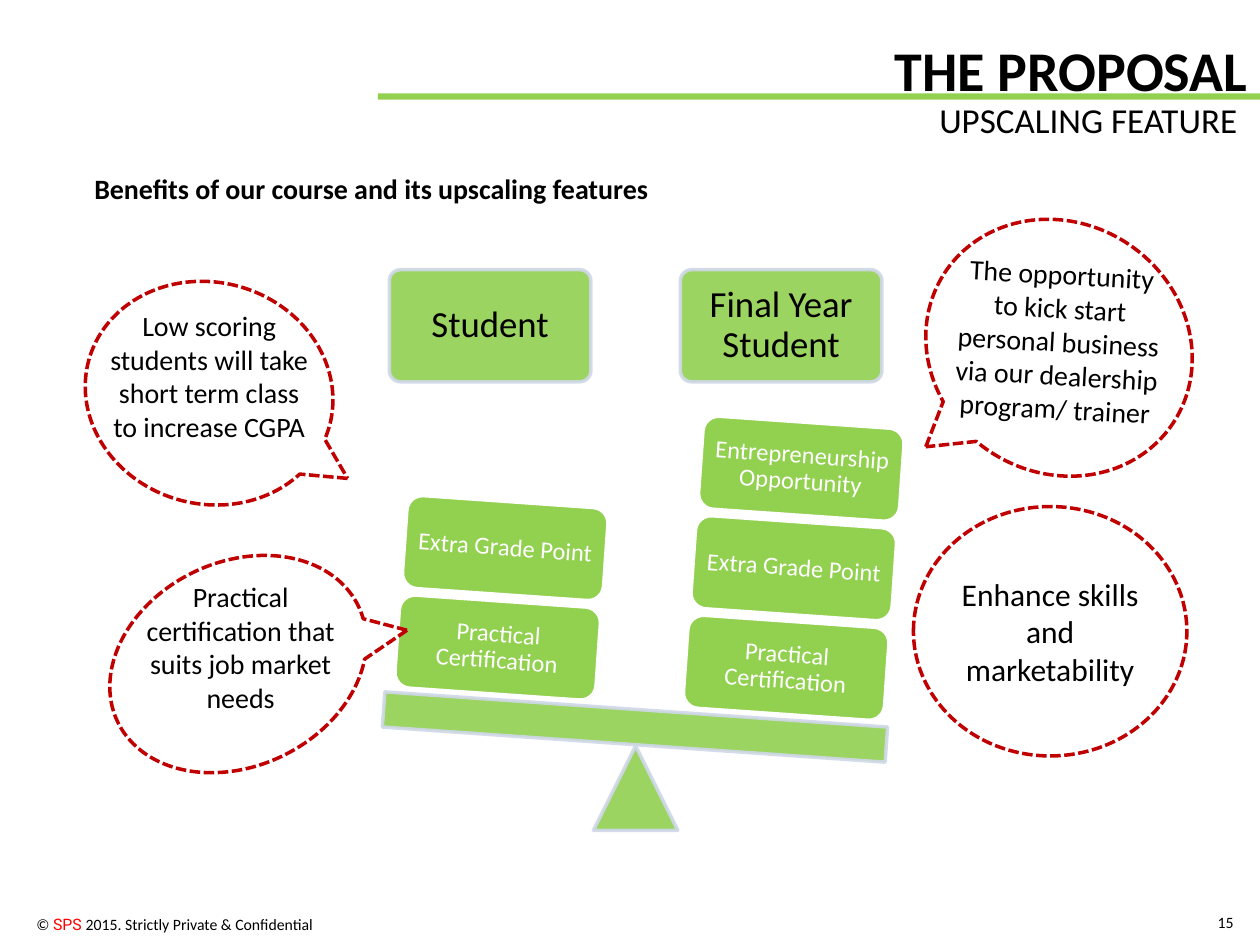
from lxml import etree
from pptx import Presentation
from pptx.dml.color import RGBColor
from pptx.enum import dml, shapes, text
from pptx.oxml.ns import qn
from pptx.util import Inches, Pt

HUE = {"ink": "000000", "green": "92D050", "edge": "D0D8E8", "white": "FFFFFF",
       "red": "C00000", "mark": "FF0000"}
KIND = shapes.MSO_SHAPE
SIDE = {"l": text.PP_ALIGN.LEFT, "c": text.PP_ALIGN.CENTER, "r": text.PP_ALIGN.RIGHT}

HEADS = [("Student", 3.09), ("Final Year Student", 5.4)]
# Each stack: left and top of its lowest card, then labels from the bottom up
STACKS = [
    (5.44, 4.93, ["Practical Certification", "Extra Grade Point",
                  "Entrepreneurship Opportunity"]),
    (3.15, 4.77, ["Practical Certification", "Extra Grade Point"]),
]
STEP = (0.06, -0.79)
TILT = 4
# Balloon box and turn, then its words with their box and turn
CALLS = [
    ((0.78, 2.13, 1.76, 1.98), 285.1,
     "Low scoring students will take short term class to increase CGPA",
     (0.75, 2.4, 1.82, 1.18), 0),
    ((1.08, 4.21, 1.62, 2.12), 244.4,
     "Practical certification that suits job market needs",
     (0.99, 4.55, 1.84, 1.18), 0),
    ((7.32, 1.77, 2.17, 1.98), 33.3,
     "The opportunity to kick start personal business via our dealership "
     "program/ trainer", (7.49, 1.99, 1.82, 1.45), 3.1),
]

deck = Presentation()
deck.slide_width, deck.slide_height = Inches(10), Inches(7.5)
slide = deck.slides.add_slide(deck.slide_layouts[5])


def color(name):
    return RGBColor.from_string(HUE[name])


def fade(fill):
    """Make a solid fill 90 % opaque."""
    for tint in fill.iter(qn("a:srgbClr")):
        etree.SubElement(tint, qn("a:alpha"), val="90000")


def write(shape, runs, size=16, hue="ink", bold=False, side="l", mid=False,
          pad=(0.1, 0.05), gap=None):
    """Fill a shape with one paragraph; runs is a string or (words, font, hue) tuples."""
    frame = shape.text_frame
    frame.word_wrap = True
    frame.auto_size = text.MSO_AUTO_SIZE.NONE
    frame.vertical_anchor = text.MSO_ANCHOR.MIDDLE if mid else text.MSO_ANCHOR.TOP
    frame.margin_left = frame.margin_right = Inches(pad[0])
    frame.margin_top = frame.margin_bottom = Inches(pad[1])
    para = frame.paragraphs[0]
    para.alignment = SIDE[side]
    if gap:
        para.line_spacing = gap
    if isinstance(runs, str):
        runs = [(runs, "Calibri", hue)]
    for words, face, tone in runs:
        run = para.add_run()
        run.text = words
        font = run.font
        font.name, font.size, font.bold = face, Pt(size), bold
        font.color.rgb = color(tone)


def label(box, runs, turn=0, **form):
    shape = slide.shapes.add_textbox(*map(Inches, box))
    shape.rotation = turn
    write(shape, runs, **form)


def draw(kind, box, fill=None, line=None, turn=0, clear=False, dash=False):
    shape = slide.shapes.add_shape(kind, *map(Inches, box))
    shape.shadow.inherit = False
    shape.rotation = turn
    if kind == KIND.ROUNDED_RECTANGLE and clear:
        shape.adjustments[0] = 0.1
    if fill:
        shape.fill.solid()
        shape.fill.fore_color.rgb = color(fill)
    else:
        shape.fill.background()
    if line:
        shape.line.color.rgb = color(line)
        shape.line.width = Pt(2)
    else:
        shape.line.fill.background()
    if dash:
        shape.line.dash_style = dml.MSO_LINE.SQUARE_DOT
        shape.line._ln.find(qn("a:prstDash")).set("val", "sysDash")
    if clear:
        fade(shape._element.spPr)
    return shape


# Frame of the page
draw(KIND.RECTANGLE, (3, 0.74, 7, 0.05), "green")
label((0.17, 7.21, 2.41, 0.25),
      [("© ", "Calibri", "ink"), ("SPS ", "Roboto", "mark"),
       ("2015. Strictly Private & Confidential", "Calibri", "ink")],
      size=9, side="r")
label((9.49, 7.12, 0.4, 0.4), "15", size=9, side="r", mid=True)

title = slide.shapes.title
title.left, title.top, title.width, title.height = map(Inches, (7, 0.23, 3.08, 0.64))
write(title, "THE PROPOSAL", size=32, bold=True)
label((4.92, 0.73, 5, 0.44), "UPSCALING FEATURE", size=20, side="r")
label((0.65, 1.31, 5.25, 0.37), "Benefits of our course and its upscaling features",
      bold=True)

# Balance
for words, left in HEADS:
    head = draw(KIND.ROUNDED_RECTANGLE, (left, 2.14, 1.6, 0.89), "green", "edge",
                clear=True)
    write(head, words, size=21, side="c", mid=True, pad=(0.09, 0.09), gap=0.9)
draw(KIND.ISOSCELES_TRIANGLE, (4.71, 5.92, 0.67, 0.67), "green", "edge", clear=True)
draw(KIND.RECTANGLE, (3.04, 5.63, 4, 0.28), "green", "edge", TILT, clear=True)
for left, top, names in STACKS:
    for i, name in enumerate(names):
        box = (left + i * STEP[0], top + i * STEP[1], 1.6, 0.74)
        card = draw(KIND.ROUNDED_RECTANGLE, box, "green", "white", TILT)
        write(card, name, size=14, hue="white", side="c", mid=True,
              pad=(0.06, 0.06), gap=0.9)

# Balloons
for box, turn, words, area, lean in CALLS:
    draw(KIND.OVAL_CALLOUT, box, "white", "red", turn, dash=True)
    label(area, words, lean, side="c")
skill = draw(KIND.OVAL, (7.25, 4.02, 2.17, 1.98), line="red", dash=True)
write(skill, "Enhance skills and marketability", size=18, side="c", mid=True,
      pad=(0.04, 0.05))

deck.save("out.pptx")
